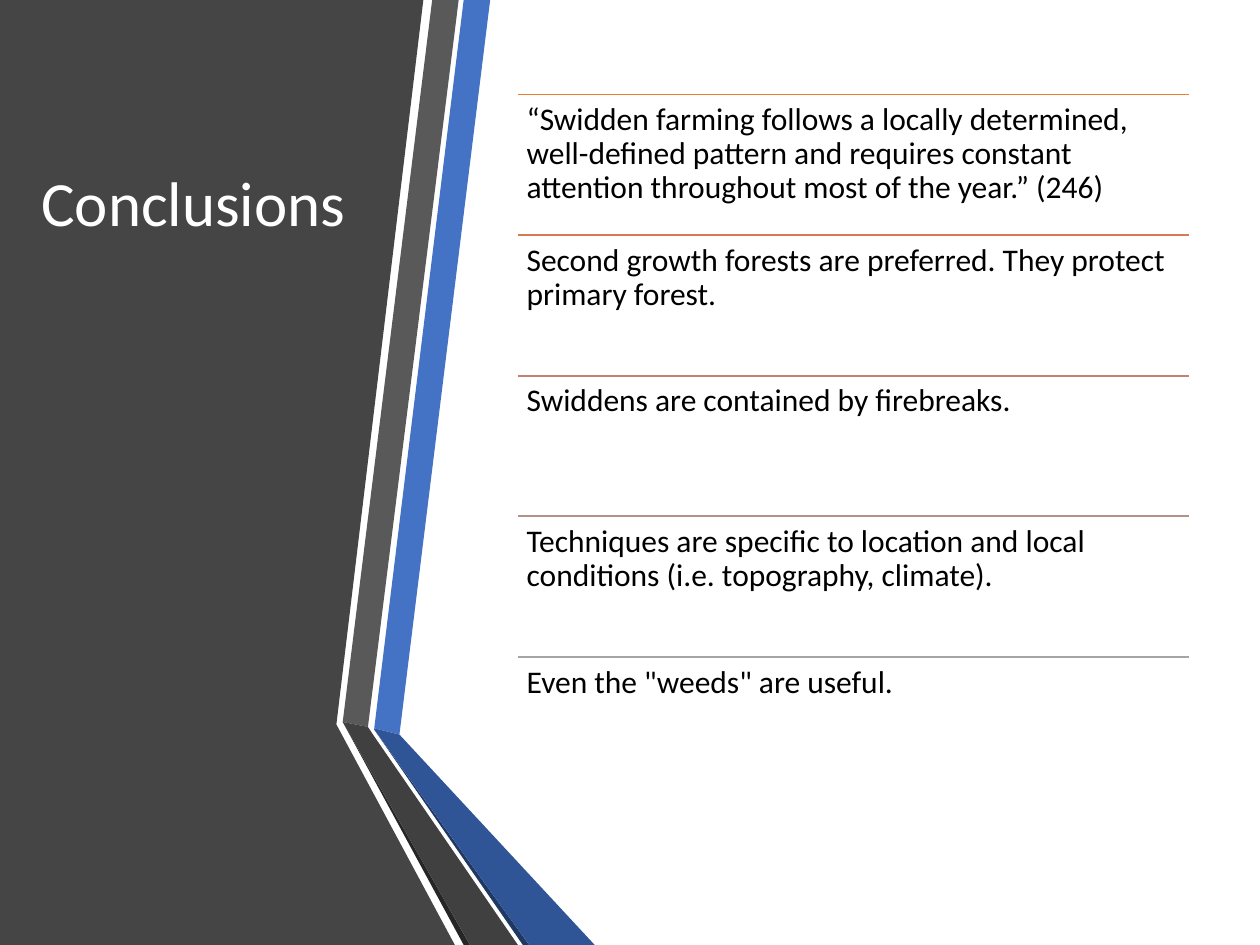
"""Build the Conclusions slide: folded ribbon panel and ruled statements."""
from dataclasses import dataclass

import lxml.etree
import pptx
import pptx.dml.color
import pptx.enum.shapes
import pptx.enum.text
import pptx.oxml.ns
import pptx.util

Inches = pptx.util.Inches

COLORS = {
    "panel": "454545",
    "blue": "4472C4",
    "gray": "595959",
    "gray_edge": "262626",
    "blue_edge": "203864",
    "blue_fold": "2F5597",
    "gray_fold": "404040",
    "rule_1": "ED7D31",
    "rule_2": "D87A51",
    "rule_3": "C48170",
    "rule_4": "B4908B",
    "rule_5": "A5A5A5",
    "title": "FFFFFF",
    "body": "000000",
}


@dataclass(frozen=True)
class Band:
    color: str
    points: tuple[tuple[float, float], ...]


@dataclass(frozen=True)
class Statement:
    color: str
    text: str


BANDS = (
    Band("panel", ((0, 0), (2.64, 0), (3.36, 0), (2.67, 5.75), (3.61, 7.5), (0, 7.5))),
    Band("blue", ((2.97, 5.78), (3.17, 5.83), (3.89, 0), (3.68, 0))),
    Band("gray", ((3.64, 0), (3.43, 0), (2.72, 5.73), (2.92, 5.77))),
    Band("gray_edge", ((2.72, 5.73), (3.68, 7.5), (3.73, 7.5))),
    Band("blue_edge", ((2.97, 5.79), (4.15, 7.5), (4.2, 7.5))),
    Band("blue_fold", ((2.97, 5.79), (4.2, 7.5), (4.72, 7.5), (3.17, 5.83), (2.97, 5.78))),
    Band("gray_fold", ((4.11, 7.5), (2.96, 5.83), (2.92, 5.77), (2.72, 5.73), (3.73, 7.5))),
)

STATEMENTS = (
    Statement("rule_1", "“Swidden farming follows a locally determined, well-defined pattern "
                        "and requires constant attention throughout most of the year.” (246)"),
    Statement("rule_2", "Second growth forests are preferred. They protect primary forest."),
    Statement("rule_3", "Swiddens are contained by firebreaks."),
    Statement("rule_4", "Techniques are specific to location and local conditions "
                        "(i.e. topography, climate)."),
    Statement("rule_5", 'Even the "weeds" are useful.'),
)

LIST_LEFT, LIST_TOP, LIST_WIDTH, LIST_HEIGHT = 4.11, 0.75, 5.33, 5.58
ROW_HEIGHT = LIST_HEIGHT / len(STATEMENTS)


def rgb(name: str) -> pptx.dml.color.RGBColor:
    """Return the named colour."""
    return pptx.dml.color.RGBColor.from_string(COLORS[name])


def add_band(s: pptx.slide.Slide, band: Band) -> None:
    """Draw one filled polygon of the ribbon."""
    first, *rest = [(Inches(x), Inches(y)) for x, y in band.points]
    builder = s.shapes.build_freeform(*first)
    builder.add_line_segments(rest, close=True)
    sp = builder.convert_to_shape()
    sp.shadow.inherit = False
    sp.fill.solid()
    sp.fill.fore_color.rgb = rgb(band.color)
    sp.line.fill.background()


def add_text(s: pptx.slide.Slide, box: tuple[float, float, float, float],
             text: str, size: int, color: str) -> pptx.text.text.TextFrame:
    """Add a wrapped text box and return its text frame."""
    tf = s.shapes.add_textbox(*map(Inches, box)).text_frame
    tf.word_wrap = True
    tf.text = text
    p = tf.paragraphs[0]
    p.line_spacing = 0.9
    font = p.runs[0].font
    font.name = "Calibri"
    font.size = pptx.util.Pt(size)
    font.color.rgb = rgb(color)
    return tf


def add_title(s: pptx.slide.Slide, text: str) -> None:
    """Add the title on the dark panel."""
    tf = add_text(s, (0.17, 0.75, 2.8, 1.77), text, 36, "title")
    tf.vertical_anchor = pptx.enum.text.MSO_ANCHOR.MIDDLE
    tf.paragraphs[0]._p.get_or_add_pPr().set("marL", str(Inches(0.06)))


def add_statement(s: pptx.slide.Slide, statement: Statement, top: float) -> None:
    """Draw a coloured rule with its statement below."""
    rule = s.shapes.add_connector(
        pptx.enum.shapes.MSO_CONNECTOR.STRAIGHT, Inches(LIST_LEFT), Inches(top),
        Inches(LIST_LEFT + LIST_WIDTH), Inches(top))
    rule.line.color.rgb = rgb(statement.color)
    rule.line.width = pptx.util.Pt(1)
    lxml.etree.SubElement(rule._element.spPr, pptx.oxml.ns.qn("a:effectLst"))
    tf = add_text(s, (LIST_LEFT, top, LIST_WIDTH, ROW_HEIGHT), statement.text, 18, "body")
    tf.margin_left = tf.margin_right = tf.margin_top = tf.margin_bottom = Inches(0.07)


def main() -> None:
    """Build and save the slide."""
    prs = pptx.Presentation()
    prs.slide_width, prs.slide_height = Inches(10), Inches(7.5)
    s = prs.slides.add_slide(prs.slide_layouts[6])
    for band in BANDS:
        add_band(s, band)
    add_title(s, "Conclusions")
    for i, statement in enumerate(STATEMENTS):
        add_statement(s, statement, LIST_TOP + i * ROW_HEIGHT)
    prs.save("out.pptx")


if __name__ == "__main__":
    main()
